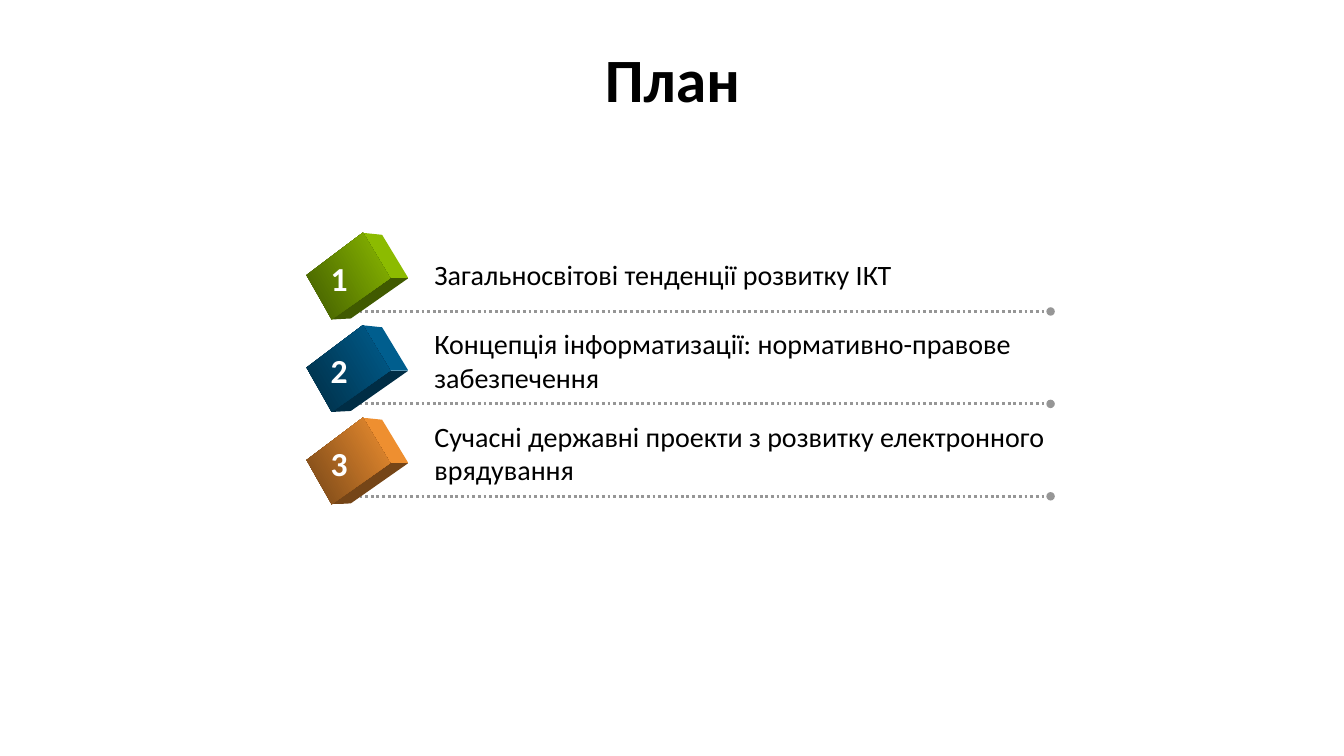
from lxml import etree
from pptx import Presentation
from pptx.dml.color import RGBColor
from pptx.enum.dml import MSO_LINE
from pptx.enum.shapes import MSO_CONNECTOR
from pptx.enum.text import MSO_ANCHOR, PP_ALIGN
from pptx.oxml.ns import qn
from pptx.util import Inches, Pt

COLORS = {"text": "000000", "number": "FFFFFF", "rule": "969696"}

# Item text, top of its text box, and the cube's bright and dark colours
ITEMS = [
    ("Загальносвітові тенденції розвитку ІКТ", 2.51, "8CBB00", "405A00"),
    ("Концепція інформатизації: нормативно-правове забезпечення", 3.19, "005E8E", "002D45"),
    ("Сучасні державні проекти з розвитку електронного врядування", 4.11, "EE8F30", "754517"),
]
FIRST_TOP, ROW_STEP = 2.31, 0.917

# Cube corners, measured from the left edge of the slide and the top of the row
LEFT, TOP, BACK_TOP = (3.04, 0.42), (3.6, 0), (3.79, 0.02)
BACK_RIGHT, RIGHT = (4.05, 0.45), (3.87, 0.45)
BOTTOM, BACK_BOTTOM = (3.29, 0.86), (3.48, 0.85)


def write(shape, text, size, color="text", bold=False, align=PP_ALIGN.LEFT,
          anchor=MSO_ANCHOR.TOP, wrap=True, spacing=None):
    frame = shape.text_frame
    frame.word_wrap = wrap
    frame.vertical_anchor = anchor
    para = frame.paragraphs[0]
    para.alignment = align
    para.line_spacing = spacing
    span = para.add_run()
    span.text = text
    span.font.name = "Calibri"
    span.font.size = Pt(size)
    span.font.bold = bold
    span.font.color.rgb = RGBColor.from_string(COLORS[color])


def add_face(page, corners, top, start, end):
    """Draw one side of a cube, shaded from start to end colour."""
    points = [(Inches(x), Inches(top + y)) for x, y in corners]
    builder = page.shapes.build_freeform(*points[0])
    builder.add_line_segments(points[1:])
    face = builder.convert_to_shape()
    face.shadow.inherit = False
    face.line.fill.background()
    face.fill.gradient()
    face.fill.gradient_angle = 30
    for stop, color in zip(face.fill.gradient_stops, (start, end)):
        stop.color.rgb = RGBColor.from_string(color)


deck = Presentation()
deck.slide_width, deck.slide_height = Inches(13.33), Inches(7.5)
page = deck.slides.add_slide(deck.slide_layouts[5])

title = page.shapes.title
title.left, title.top = Inches(0.92), Inches(0.4)
title.width, title.height = Inches(11.5), Inches(0.83)
write(title, "План", 44, bold=True, align=PP_ALIGN.CENTER,
      anchor=MSO_ANCHOR.MIDDLE, spacing=0.9)

for index, (text, text_top, bright, dark) in enumerate(ITEMS):
    top = FIRST_TOP + index * ROW_STEP

    rule_y = Inches(top + 0.78)
    rule = page.shapes.add_connector(
        MSO_CONNECTOR.STRAIGHT, Inches(3.51), rule_y, Inches(10.42), rule_y)
    rule.line.color.rgb = RGBColor.from_string(COLORS["rule"])
    rule.line.width = Pt(2)
    rule.line.dash_style = MSO_LINE.ROUND_DOT
    etree.SubElement(rule.line._get_or_add_ln(), qn("a:tailEnd"), type="oval")
    etree.SubElement(rule._element.spPr, qn("a:effectLst"))

    add_face(page, (TOP, BACK_TOP, BACK_RIGHT, RIGHT), top, bright, bright)
    add_face(page, (BOTTOM, RIGHT, BACK_RIGHT, BACK_BOTTOM), top, dark, dark)
    add_face(page, (LEFT, TOP, RIGHT, BOTTOM), top, dark, bright)

    number = page.shapes.add_textbox(
        Inches(3.18), Inches(top + 0.2), Inches(0.51), Inches(0.5))
    write(number, str(index + 1), 24, color="number", bold=True, wrap=False)

    label = page.shapes.add_textbox(
        Inches(4.21), Inches(text_top), Inches(6.46), Inches(0.44 if index == 0 else 0.77))
    write(label, text, 20)

deck.save("out.pptx")
